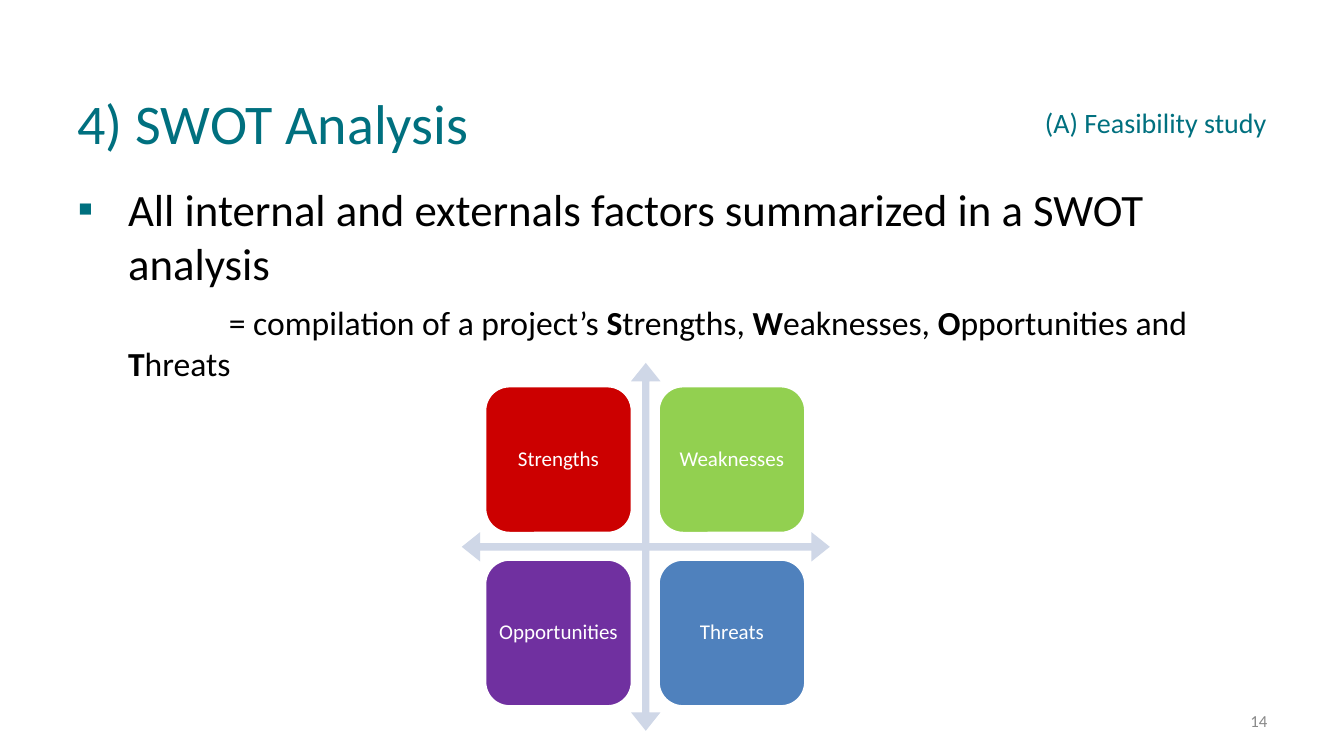
from dataclasses import dataclass

from lxml import etree
from pptx import Presentation
from pptx.dml.color import RGBColor
from pptx.enum.shapes import MSO_SHAPE
from pptx.enum.text import MSO_ANCHOR, MSO_AUTO_SIZE, PP_ALIGN
from pptx.oxml.ns import qn
from pptx.util import Inches, Pt

LEFT, CENTER, RIGHT = PP_ALIGN.LEFT, PP_ALIGN.CENTER, PP_ALIGN.RIGHT
TOP, MIDDLE = MSO_ANCHOR.TOP, MSO_ANCHOR.MIDDLE
NO_AUTOFIT = MSO_AUTO_SIZE.NONE
ROUNDED, QUAD_ARROW = MSO_SHAPE.ROUNDED_RECTANGLE, MSO_SHAPE.QUAD_ARROW


@dataclass(frozen=True)
class Theme:
    font: str = "Calibri"
    teal: str = "00707F"
    black: str = "000000"
    white: str = "FFFFFF"
    gray: str = "888888"
    arrow: str = "CFD7E7"
    title_size: int = 40
    body_size: int = 32
    detail_size: int = 24
    section_size: int = 20
    card_size: int = 15
    number_size: int = 12


@dataclass(frozen=True)
class Label:
    text: str
    box: tuple[float, float, float, float]
    size: int
    color: str


@dataclass(frozen=True)
class Card:
    text: str
    color: str


THEME = Theme()
TITLE_BOX = (0.67, 0.87, 8.38, 0.68)
BODY_BOX = (0.67, 1.75, 12, 4.95)
LABELS = [
    Label("14", (9.56, 6.95, 3.11, 0.4), THEME.number_size, THEME.gray),
    Label("(A) Feasibility study", (9.04, 0.87, 3.62, 0.68), THEME.section_size, THEME.teal),
]
CARDS = [
    Card("Strengths", "CC0000"),
    Card("Weaknesses", "92D050"),
    Card("Opportunities", "7030A0"),
    Card("Threats", "4F81BD"),
]
ARROW_BOX = (4.58, 3.6, 3.65, 3.65)
CARD_LEFT, CARD_TOP, CARD_SIZE, CARD_PITCH = 4.81, 3.83, 1.46, 1.72
DETAIL_SPANS = [
    ("= compilation of a project’s ", False),
    ("S", True), ("trengths, ", False),
    ("W", True), ("eaknesses, ", False),
    ("O", True), ("pportunities and ", False),
    ("T", True), ("hreats", False),
]


def place(shape, box: tuple[float, float, float, float]) -> None:
    shape.left, shape.top, shape.width, shape.height = map(Inches, box)


def set_frame(frame, anchor) -> None:
    frame.word_wrap = True
    frame.auto_size = NO_AUTOFIT
    frame.vertical_anchor = anchor


def style(para, size: int, color: str, align=LEFT) -> None:
    para.alignment = align
    para.font.name = THEME.font
    para.font.size = Pt(size)
    para.font.color.rgb = RGBColor.from_string(color)


def indent(para, margin: float, first_line: float, bullet: str = "") -> None:
    props = para._p.get_or_add_pPr()
    props.set("marL", str(Inches(margin)))
    props.set("indent", str(Inches(first_line)))
    if bullet:
        color = etree.SubElement(props, qn("a:buClr"))
        etree.SubElement(color, qn("a:srgbClr"), val=THEME.teal)
        etree.SubElement(props, qn("a:buChar"), char=bullet)
    else:
        etree.SubElement(props, qn("a:buNone"))


def add_label(page, label: Label) -> None:
    box = page.shapes.add_textbox(*map(Inches, label.box))
    set_frame(box.text_frame, MIDDLE)
    para = box.text_frame.paragraphs[0]
    para.text = label.text
    style(para, label.size, label.color, RIGHT)


def add_filled(group, kind, box: tuple[float, float, float, float],
               color: str, adjustments: list[float]):
    shape = group.shapes.add_shape(kind, *map(Inches, box))
    shape.shadow.inherit = False
    shape.fill.solid()
    shape.fill.fore_color.rgb = RGBColor.from_string(color)
    shape.line.fill.background()
    for index, value in enumerate(adjustments):
        shape.adjustments[index] = value
    return shape


def add_card(group, card: Card, row: int, column: int) -> None:
    box = (CARD_LEFT + column * CARD_PITCH, CARD_TOP + row * CARD_PITCH, CARD_SIZE, CARD_SIZE)
    shape = add_filled(group, ROUNDED, box, card.color, [0.167])
    shape.line.color.rgb = RGBColor.from_string(THEME.white)
    shape.line.width = Pt(2)
    frame = shape.text_frame
    set_frame(frame, MIDDLE)
    frame.margin_left = frame.margin_right = Inches(0.06)
    frame.margin_top = frame.margin_bottom = Inches(0.06)
    para = frame.paragraphs[0]
    para.text = card.text
    para.line_spacing = 0.9
    style(para, THEME.card_size, THEME.white, CENTER)


def add_title(page) -> None:
    title = page.shapes.title
    place(title, TITLE_BOX)
    set_frame(title.text_frame, MIDDLE)
    para = title.text_frame.paragraphs[0]
    para.text = "4) SWOT Analysis"
    style(para, THEME.title_size, THEME.teal)


def add_body(page) -> None:
    body = page.placeholders[1]
    place(body, BODY_BOX)
    frame = body.text_frame
    set_frame(frame, TOP)
    summary = frame.paragraphs[0]
    summary.text = "All internal and externals factors summarized in a SWOT analysis"
    summary.space_before = Pt(0)
    indent(summary, 0.5, -0.5, "▪")
    style(summary, THEME.body_size, THEME.black)

    detail = frame.add_paragraph()
    detail.level = 1
    detail.space_before = Pt(9.4)
    indent(detail, 0.5, 1)
    style(detail, THEME.detail_size, THEME.black)
    for text, bold in DETAIL_SPANS:
        span = detail.add_run()
        span.text = text
        span.font.bold = bold


def main() -> None:
    deck = Presentation()
    deck.slide_width, deck.slide_height = Inches(13.33), Inches(7.5)
    page = deck.slides.add_slide(deck.slide_layouts[1])

    # Text
    add_title(page)
    add_body(page)
    for label in LABELS:
        add_label(page, label)

    # SWOT matrix
    matrix = page.shapes.add_group_shape()
    add_filled(matrix, QUAD_ARROW, ARROW_BOX, THEME.arrow, [0.02, 0.04, 0.05])
    for index, card in enumerate(CARDS):
        add_card(matrix, card, *divmod(index, 2))

    deck.save("out.pptx")


if __name__ == "__main__":
    main()
